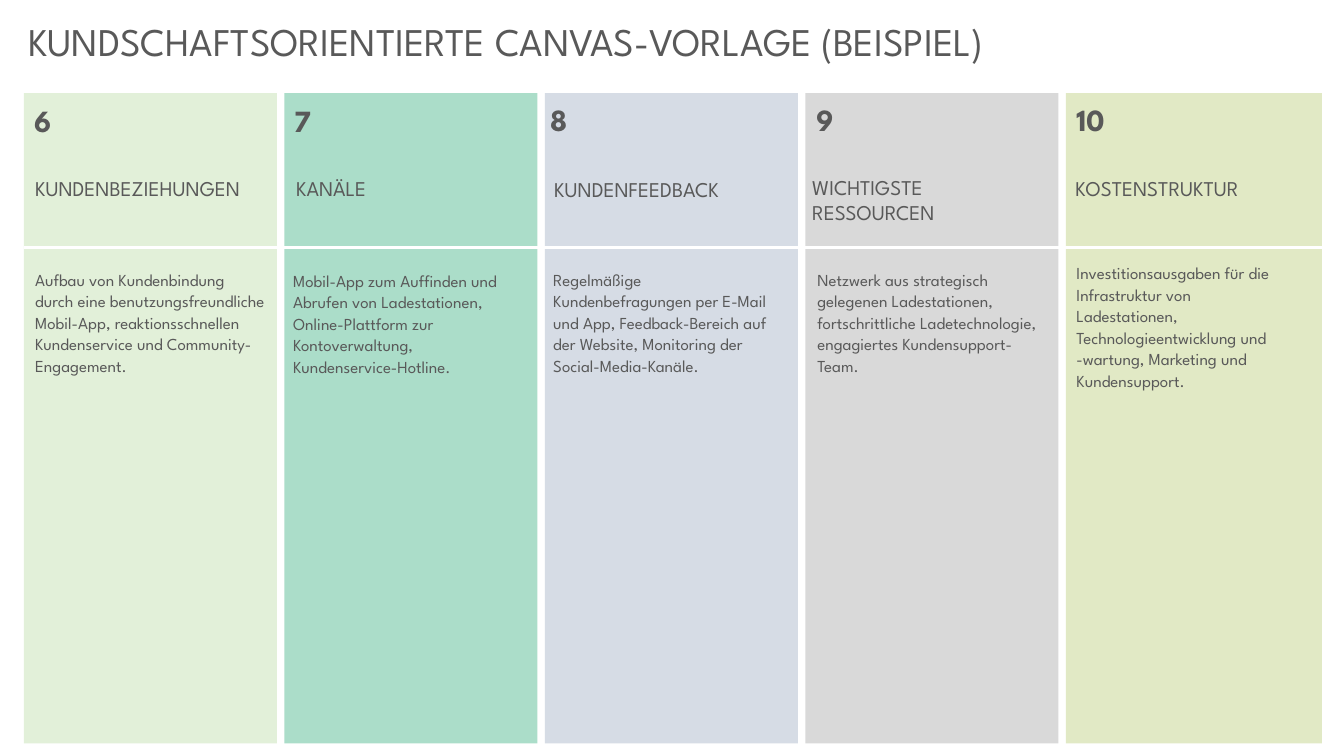
from dataclasses import dataclass

import pptx
import pptx.dml.color
import pptx.enum.shapes
import pptx.enum.text
import pptx.util
from pptx.dml.color import RGBColor
from pptx.util import Pt

FONT = "League Spartan"
TEXT_GRAY = RGBColor(0x59, 0x59, 0x59)
WHITE = RGBColor(0xFF, 0xFF, 0xFF)
LIGHT_GREEN = RGBColor(0xE2, 0xF0, 0xD9)
MINT = RGBColor(0xAB, 0xDD, 0xC9)
BLUE_GRAY = RGBColor(0xD6, 0xDC, 0xE5)
GRAY = RGBColor(0xD9, 0xD9, 0xD9)
LIME = RGBColor(0xE1, 0xE9, 0xC5)

COLUMN_LEFT = 17
COLUMN_PITCH = 186.1
COLUMN_TOP = 66.5
COLUMN_HEIGHT = 464.5
DIVIDER_TOP = 177


@dataclass
class Column:
    number: str
    heading: str
    body: str
    color: RGBColor
    number_left: float
    heading_left: float
    body_left: float
    body_width: float
    number_top: float = 66.5
    heading_top: float = 121.7
    body_top: float = 188
    width: float = 180.7


COLUMNS = [
    Column("6", "KUNDENBEZIEHUNGEN",
           "Aufbau von Kundenbindung durch eine benutzungsfreundliche Mobil-App, "
           "reaktionsschnellen Kundenservice und Community-Engagement.",
           LIGHT_GREEN, 17.3, 18, 18, 178.6, number_top=67),
    Column("7", "KANÄLE",
           "Mobil-App zum Auffinden und Abrufen von Ladestationen, \v"
           "Online-Plattform zur Kontoverwaltung, Kundenservice-Hotline.",
           MINT, 203, 204.5, 202.3, 173.5, number_top=67, body_top=188.6),
    Column("8", "KUNDENFEEDBACK",
           "Regelmäßige Kundenbefragungen per E-Mail und App, Feedback-Bereich "
           "auf der Website, Monitoring der Social-Media-Kanäle.",
           BLUE_GRAY, 385.9, 388.8, 388.1, 169.2, heading_top=122.4),
    Column("9", "WICHTIGSTE \vRESSOURCEN",
           "Netzwerk aus strategisch gelegenen Ladestationen, fortschrittliche "
           "Ladetechnologie, engagiertes Kundensupport-Team.",
           GRAY, 576, 573.1, 576.7, 171.4, heading_top=121.2),
    Column("10", "KOSTENSTRUKTUR",
           "Investitionsausgaben für die Infrastruktur von Ladestationen, "
           "Technologieentwicklung und -wartung, Marketing und Kundensupport.",
           LIME, 761.8, 761, 761.8, 162, body_top=183.2, width=182.9),
]


def add_text(slide, text, *, left, top, width, height, size,
             bold=False, line_spacing=None, space_after=None):
    shape = slide.shapes.add_textbox(Pt(left), Pt(top), Pt(width), Pt(height))
    frame = shape.text_frame
    frame.word_wrap = True
    frame.vertical_anchor = pptx.enum.text.MSO_ANCHOR.TOP
    paragraph = frame.paragraphs[0]
    paragraph.text = text
    paragraph.line_spacing = line_spacing
    if space_after is not None:
        paragraph.space_after = Pt(space_after)
    for run in paragraph.runs:
        run.font.name = FONT
        run.font.size = Pt(size)
        run.font.bold = bold
        run.font.color.rgb = TEXT_GRAY


def add_panel(slide, left, width, color):
    shape = slide.shapes.add_shape(
        pptx.enum.shapes.MSO_SHAPE.RECTANGLE,
        Pt(left), Pt(COLUMN_TOP), Pt(width), Pt(COLUMN_HEIGHT))
    shape.shadow.inherit = False
    shape.fill.solid()
    shape.fill.fore_color.rgb = color
    shape.line.fill.background()


def add_divider(slide):
    connector = slide.shapes.add_connector(
        pptx.enum.shapes.MSO_CONNECTOR.STRAIGHT,
        Pt(COLUMN_LEFT), Pt(DIVIDER_TOP), Pt(950.4), Pt(DIVIDER_TOP))
    connector.line.color.rgb = WHITE
    connector.line.width = Pt(2.25)
    properties = connector._element.spPr
    properties.append(pptx.oxml.parse_xml(
        '<a:effectLst xmlns:a="http://schemas.openxmlformats.org/drawingml/2006/main"/>'))


def add_column_text(slide, column):
    add_text(slide, column.number, left=column.number_left, top=column.number_top,
             width=43.2, height=46, size=22, bold=True,
             line_spacing=1.07, space_after=8)
    add_text(slide, column.heading, left=column.heading_left, top=column.heading_top,
             width=180, height=44, size=15)
    add_text(slide, column.body, left=column.body_left, top=column.body_top,
             width=column.body_width, height=113, size=12,
             line_spacing=1.07, space_after=8)


def main():
    presentation = pptx.Presentation()
    presentation.slide_width = Pt(960)
    presentation.slide_height = Pt(540)
    slide = presentation.slides.add_slide(presentation.slide_layouts[6])
    add_text(slide, "KUNDSCHAFTSORIENTIERTE CANVAS-VORLAGE (BEISPIEL)",
             left=13, top=8.6, width=932.4, height=41, size=28)
    for index, column in enumerate(COLUMNS):
        add_panel(slide, COLUMN_LEFT + index * COLUMN_PITCH, column.width, column.color)
    add_divider(slide)
    for column in COLUMNS:
        add_column_text(slide, column)
    presentation.save("out.pptx")


if __name__ == "__main__":
    main()
